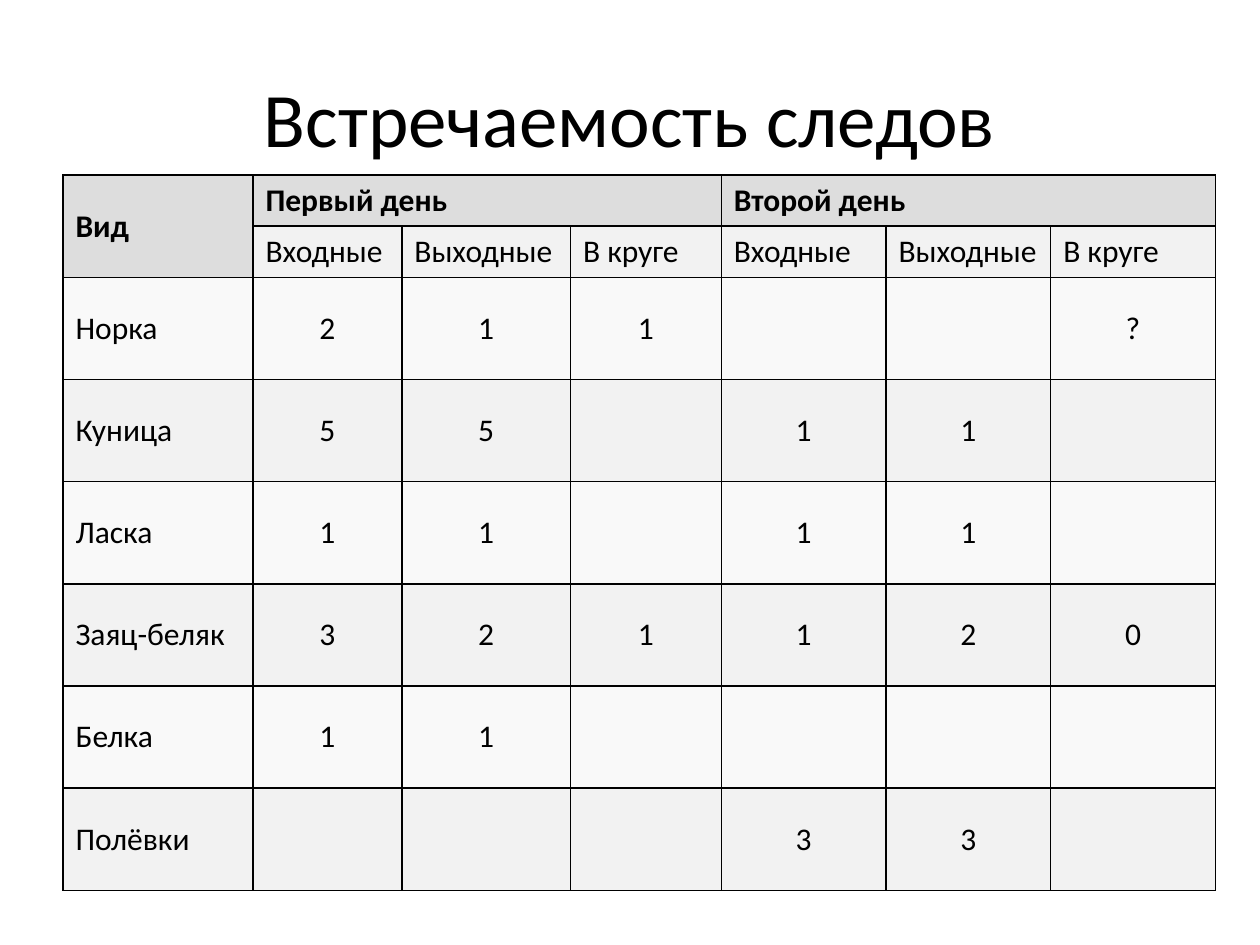
from pptx import Presentation
from pptx.dml.color import RGBColor
from pptx.enum.text import MSO_ANCHOR as Anchor, PP_ALIGN as Align
from pptx.oxml import parse_xml
from pptx.oxml.ns import nsdecls
from pptx.util import Cm, Pt


def color(value):
    return RGBColor.from_string(value)


def add_text(paragraph, text, size, bold=False):
    run = paragraph.add_run()
    run.text = text
    run.font.name = "Calibri"
    run.font.size = Pt(size)
    run.font.bold = bold
    run.font.color.rgb = color("000000")


presentation = Presentation()
presentation.slide_width = Cm(25.4)
presentation.slide_height = Cm(19.05)
slide = presentation.slides.add_slide(presentation.slide_layouts[6])

title = slide.shapes.add_textbox(Cm(1.27), Cm(0.76), Cm(22.86), Cm(3.18))
title.text_frame.word_wrap = True
title.text_frame.vertical_anchor = Anchor.MIDDLE
title_paragraph = title.text_frame.paragraphs[0]
title_paragraph.alignment = Align.CENTER
add_text(title_paragraph, "Встречаемость следов", 44)

track_kinds = ["Входные", "Выходные", "В круге"]
rows = [
    ["Вид", "Первый день", "", "", "Второй день", "", ""],
    ["", *track_kinds, *track_kinds],
    ["Норка", "2", "1", "1", "", "", "?"],
    ["Куница", "5", "5", "", "1", "1", ""],
    ["Ласка", "1", "1", "", "1", "1", ""],
    ["Заяц-беляк", "3", "2", "1", "1", "2", "0"],
    ["Белка", "1", "1", "", "", "", ""],
    ["Полёвки", "", "", "", "3", "3", ""],
]
column_widths = [3.83, 3, 3.4, 3.04, 3.32, 3.32, 3.32]
row_heights = [1.03] * 2 + [2.06] * 6

table = slide.shapes.add_table(
    len(rows), len(column_widths), Cm(1.27), Cm(3.53),
    Cm(sum(column_widths)), Cm(sum(row_heights)),
).table
for column, width in zip(table.columns, column_widths):
    column.width = Cm(width)
for row, height in zip(table.rows, row_heights):
    row.height = Cm(height)

for row_index, texts in enumerate(rows):
    for column_index, text in enumerate(texts):
        cell = table.cell(row_index, column_index)
        is_heading = row_index == 0
        cell.fill.solid()
        cell.fill.fore_color.rgb = color(
            "DDDDDD" if is_heading else "F2F2F2" if row_index % 2 else "F9F9F9")
        cell.vertical_anchor = Anchor.MIDDLE
        properties = cell._tc.get_or_add_tcPr()
        for position, side in enumerate("LRTB"):
            properties.insert(position, parse_xml(
                f'<a:ln{side} {nsdecls("a")} w="12700"><a:solidFill>'
                f'<a:srgbClr val="000000"/></a:solidFill></a:ln{side}>'))
        if text:
            paragraph = cell.text_frame.paragraphs[0]
            if row_index > 1 and column_index > 0:
                paragraph.alignment = Align.CENTER
            add_text(paragraph, text, 18, is_heading)

table.cell(0, 0).merge(table.cell(1, 0))
for first_column in (1, 4):
    table.cell(0, first_column).merge(table.cell(0, first_column + 2))

presentation.save("out.pptx")
